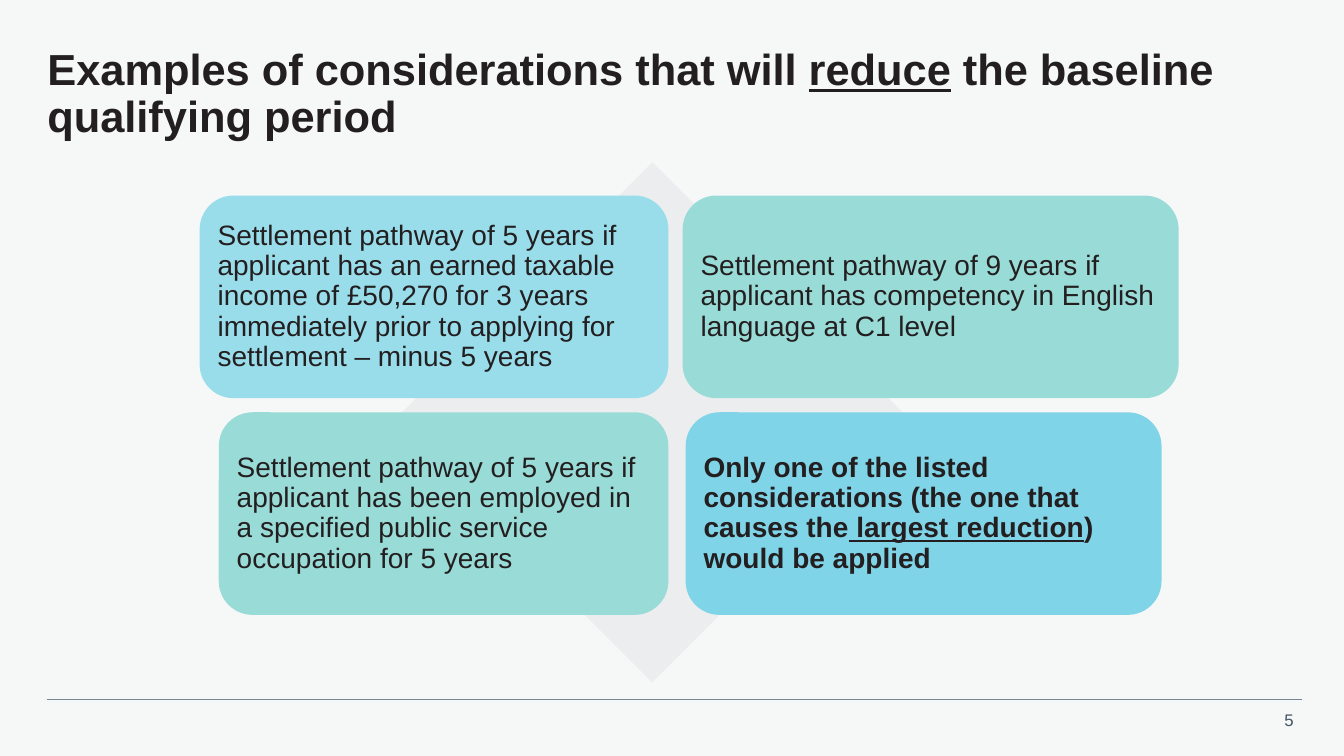
"""Build the slide on considerations that reduce the baseline qualifying period."""
from pptx import Presentation
from pptx.dml.color import RGBColor
from pptx.enum.shapes import MSO_CONNECTOR, MSO_SHAPE
from pptx.enum.text import MSO_ANCHOR, PP_ALIGN
from pptx.oxml.ns import qn
from pptx.util import Inches, Pt
from lxml import etree

INK = "231F20"
LEFT, RULE_Y = 0.47, 6.94
TOP_ROW, BOTTOM_ROW, CARD_HEIGHT = 1.94, 4.09, 2.01


def color(hex_code):
    return RGBColor.from_string(hex_code)


def write(shape, runs, size, ink=INK, bold=False, inset=0.0, align=PP_ALIGN.LEFT):
    frame = shape.text_frame
    frame.word_wrap = True
    frame.vertical_anchor = MSO_ANCHOR.MIDDLE
    frame.margin_left = frame.margin_right = Inches(inset)
    frame.margin_top = frame.margin_bottom = Inches(inset)
    paragraph = frame.paragraphs[0]
    paragraph.alignment = align
    paragraph.line_spacing = 0.9
    font = paragraph.font
    font.name, font.size, font.bold = "Arial", Pt(size), bold
    font.color.rgb = color(ink)
    for index, text in enumerate(runs):
        run = paragraph.add_run()
        run.text = text
        if index % 2:
            run.font.underline = True


presentation = Presentation()
presentation.slide_width, presentation.slide_height = Inches(13.33), Inches(7.5)
slide = presentation.slides.add_slide(presentation.slide_layouts[6])
slide.background.fill.solid()
slide.background.fill.fore_color.rgb = color("F6F8F8")
shapes = slide.shapes

page_number = shapes.add_textbox(Inches(12.42), Inches(7), Inches(0.41), Inches(0.3))
write(page_number, ["5"], 12, ink="425563", align=PP_ALIGN.RIGHT)

rule = shapes.add_connector(
    MSO_CONNECTOR.STRAIGHT, Inches(LEFT), Inches(RULE_Y), Inches(12.91), Inches(RULE_Y))
rule.line.color.rgb = color("768692")
rule.line.width = Pt(0.5)
etree.SubElement(rule._element.spPr, qn("a:effectLst"))

title = shapes.add_textbox(Inches(LEFT), Inches(0.47), Inches(12.47), Inches(0.95))
write(title, ["Examples of considerations that will ", "reduce",
              " the baseline qualifying period"], 31, bold=True)

diamond = shapes.add_shape(
    MSO_SHAPE.DIAMOND, Inches(3.89), Inches(1.61), Inches(5.16), Inches(5.16))
diamond.shadow.inherit = False
diamond.fill.solid()
diamond.fill.fore_color.rgb = color("EBEDEF")
diamond.line.fill.background()

cards = [
    (1.98, TOP_ROW, 4.65, "99DDEB", False,
     ["Settlement pathway of 5 years if applicant has an earned taxable income of "
      "£50,270 for 3 years immediately prior to applying for settlement – minus 5 years"]),
    (6.77, TOP_ROW, 4.92, "99DBD6", False,
     ["Settlement pathway of 9 years if applicant has competency in English language "
      "at C1 level"]),
    (2.17, BOTTOM_ROW, 4.46, "99DBD6", False,
     ["Settlement pathway of 5 years if applicant has been employed in a specified "
      "public service occupation for 5 years"]),
    (6.8, BOTTOM_ROW, 4.72, "80D4E7", True,
     ["Only one of the listed considerations (the one that causes the",
      " largest reduction", ") would be applied"]),
]
for left, top, width, fill, bold, runs in cards:
    card = shapes.add_shape(MSO_SHAPE.ROUNDED_RECTANGLE, Inches(left), Inches(top),
                            Inches(width), Inches(CARD_HEIGHT))
    card.shadow.inherit = False
    card.fill.solid()
    card.fill.fore_color.rgb = color(fill)
    card.line.fill.background()
    write(card, runs, 20, bold=bold, inset=0.08)

presentation.save("out.pptx")
